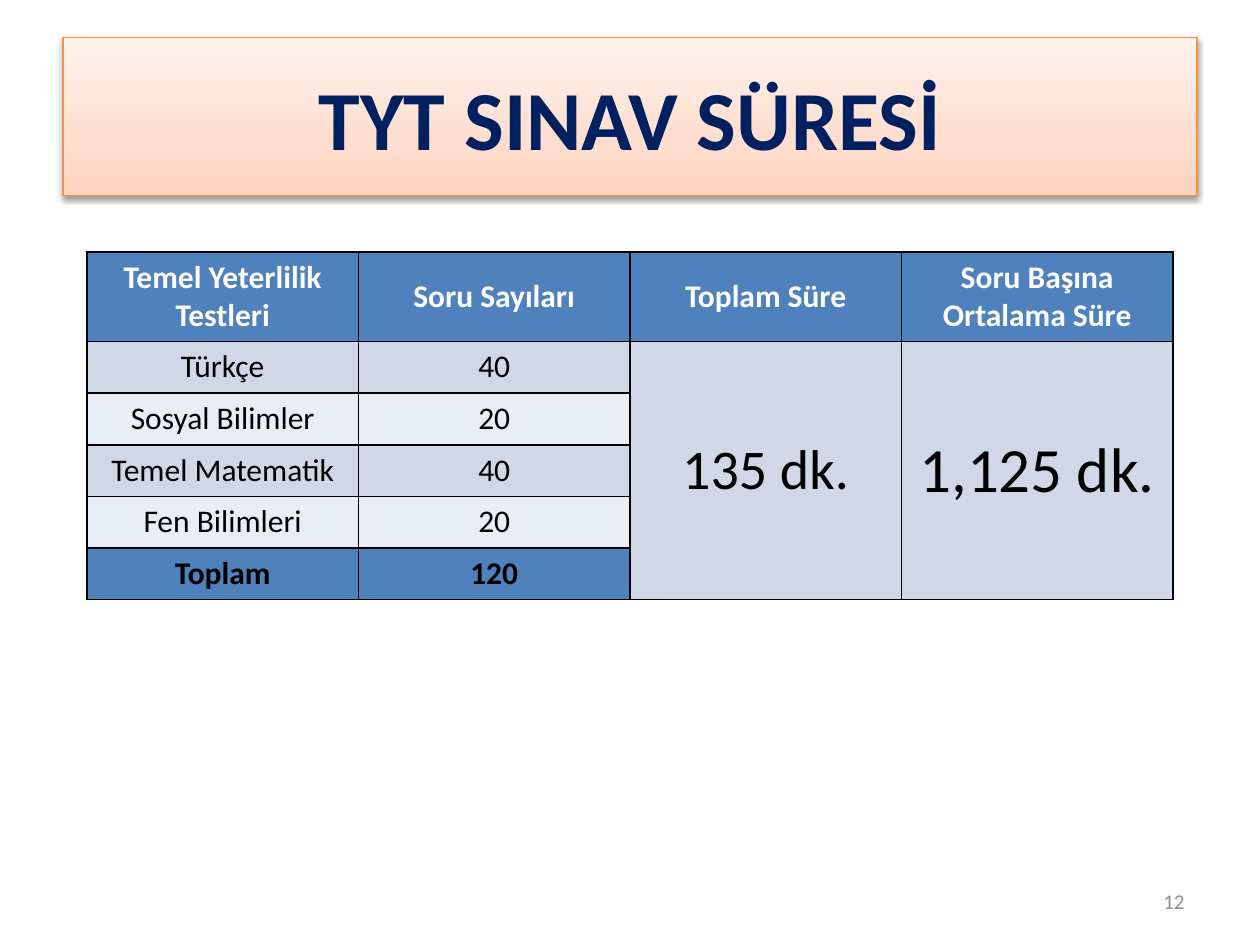
from pptx import Presentation
from pptx.dml.color import RGBColor
from pptx.enum.text import MSO_ANCHOR, PP_ALIGN
from pptx.oxml import parse_xml
from pptx.oxml.ns import nsdecls
from pptx.util import Inches, Pt

FONT = "Calibri"
COLORS = {
    "navy": "002060", "orange": "F69240", "blue": "4F81BD",
    "band_dark": "D0D8E8", "band_light": "E9EDF4",
    "white": "FFFFFF", "black": "000000", "gray": "8C8C8C",
}
TITLE_GRADIENT = [(0, "FFD2BD"), (35, "FFDED0"), (100, "FFF2ED")]

HEADERS = ["Temel Yeterlilik Testleri", "Soru Sayıları",
           "Toplam Süre", "Soru Başına Ortalama Süre"]
TESTS = [("Türkçe", "40"), ("Sosyal Bilimler", "20"),
         ("Temel Matematik", "40"), ("Fen Bilimleri", "20")]
TOTAL = ("Toplam", "120")
DURATIONS = [("135 dk.", 32), ("1,125 dk.", 36)]
COLUMN_WIDTH, ROW_HEIGHT = 2.155, 0.41


def color(name):
    return RGBColor.from_string(COLORS[name])


def add_text(frame, text, size, color_name, bold=False, align=PP_ALIGN.CENTER):
    paragraph = frame.paragraphs[0]
    paragraph.alignment = align
    run = paragraph.add_run()
    run.text = text
    run.font.name = FONT
    run.font.size = Pt(size)
    run.font.bold = bold
    run.font.color.rgb = color(color_name)


def format_title(shape, text):
    shape.left, shape.top = Inches(0.5), Inches(0.3)
    shape.width, shape.height = Inches(9), Inches(1.25)

    # Gradient, outline and soft shadow
    properties = shape._element.spPr
    stops = "".join(
        f'<a:gs pos="{share * 1000}"><a:srgbClr val="{value}"/></a:gs>'
        for share, value in TITLE_GRADIENT)
    properties.append(parse_xml(
        f'<a:gradFill {nsdecls("a")} rotWithShape="1"><a:gsLst>{stops}</a:gsLst>'
        '<a:lin ang="16200000" scaled="1"/></a:gradFill>'))
    shape.line.color.rgb = color("orange")
    shape.line.width = Pt(0.75)
    properties.append(parse_xml(
        f'<a:effectLst {nsdecls("a")}><a:outerShdw blurRad="{Pt(3.1)}" '
        f'dist="{Pt(1.6)}" dir="5400000" rotWithShape="0">'
        f'<a:srgbClr val="{COLORS["black"]}"><a:alpha val="38000"/></a:srgbClr>'
        '</a:outerShdw></a:effectLst>'))

    shape.text_frame.vertical_anchor = MSO_ANCHOR.MIDDLE
    add_text(shape.text_frame, text, 48, "navy", bold=True)


def format_cell(cell, fill):
    cell.margin_left = cell.margin_right = Inches(0.07)
    cell.margin_top = cell.margin_bottom = Inches(0.05)
    properties = cell._tc.get_or_add_tcPr()
    for side in ("lnL", "lnR", "lnT", "lnB"):
        properties.append(parse_xml(
            f'<a:{side} {nsdecls("a")} w="{Pt(1)}"><a:solidFill>'
            f'<a:srgbClr val="{COLORS["black"]}"/></a:solidFill></a:{side}>'))
    cell.fill.solid()
    cell.fill.fore_color.rgb = color(fill)


def add_exam_table(slide):
    rows = [HEADERS, *TESTS, TOTAL]
    last_row = len(rows) - 1
    table = slide.shapes.add_table(
        len(rows), len(HEADERS), Inches(0.69), Inches(2),
        Inches(COLUMN_WIDTH * len(HEADERS)), Inches(ROW_HEIGHT * len(rows))).table
    for row in table.rows:
        row.height = Inches(ROW_HEIGHT)

    # Header, banded tests and total
    for row_index, texts in enumerate(rows):
        is_header = row_index == 0
        strong = row_index in (0, last_row)
        band = "band_dark" if row_index % 2 else "band_light"
        for column_index, text in enumerate(texts):
            cell = table.cell(row_index, column_index)
            format_cell(cell, "blue" if strong else band)
            if is_header:
                cell.vertical_anchor = MSO_ANCHOR.MIDDLE
            add_text(cell.text_frame, text, 18,
                     "white" if is_header else "black", bold=strong)

    # Durations spanning every row under the header
    for column_index, (text, size) in enumerate(DURATIONS, start=2):
        for row_index in range(1, len(rows)):
            format_cell(table.cell(row_index, column_index), "band_dark")
        cell = table.cell(1, column_index)
        cell.merge(table.cell(last_row, column_index))
        cell.vertical_anchor = MSO_ANCHOR.MIDDLE
        add_text(cell.text_frame, text, size, "black")


def add_slide_number(slide, number):
    box = slide.shapes.add_textbox(Inches(7.17), Inches(6.95), Inches(2.33), Inches(0.4))
    box.text_frame.word_wrap = True
    box.text_frame.vertical_anchor = MSO_ANCHOR.MIDDLE
    add_text(box.text_frame, number, 12, "gray", align=PP_ALIGN.RIGHT)


def main():
    presentation = Presentation()
    presentation.slide_width, presentation.slide_height = Inches(10), Inches(7.5)
    slide = presentation.slides.add_slide(presentation.slide_layouts[5])
    format_title(slide.shapes.title, "TYT SINAV SÜRESİ")
    add_exam_table(slide)
    add_slide_number(slide, "12")
    presentation.save("out.pptx")


if __name__ == "__main__":
    main()
